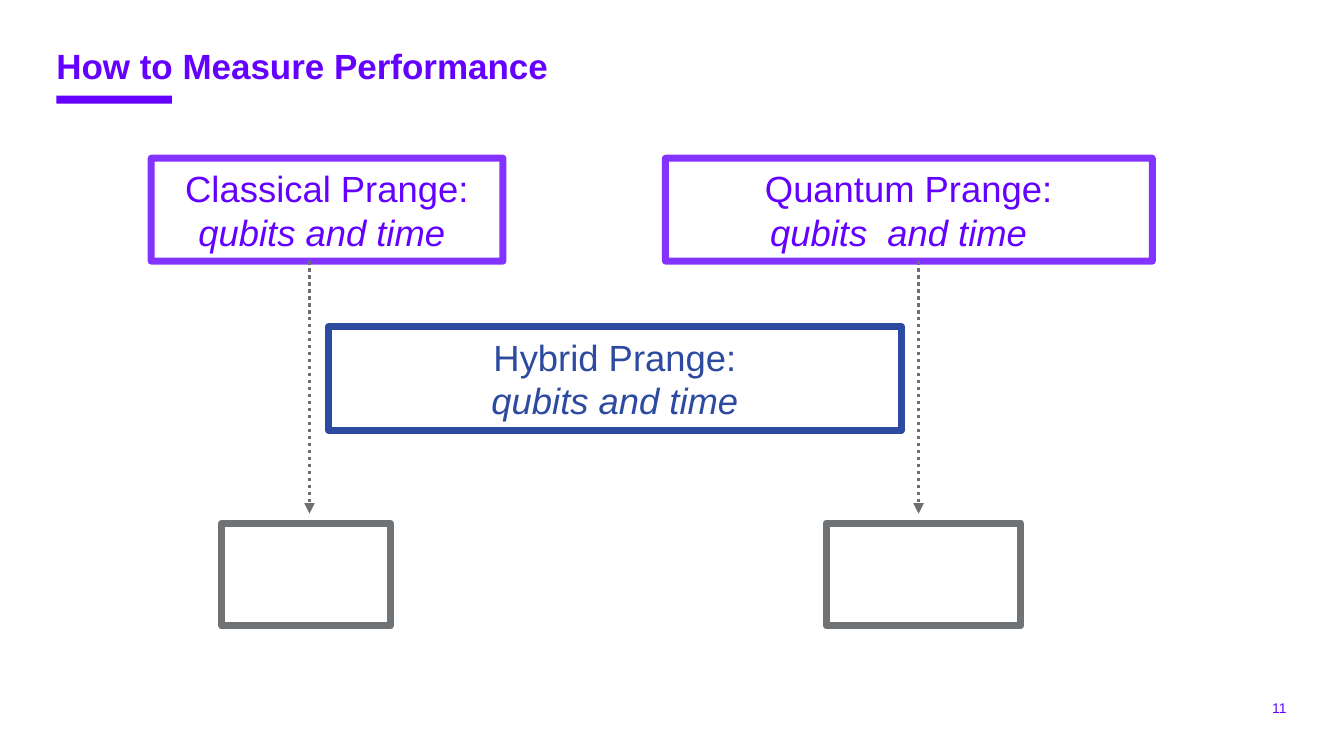
from collections import namedtuple

from lxml.etree import SubElement
from pptx import Presentation
from pptx.dml.color import RGBColor
from pptx.enum.dml import MSO_LINE_DASH_STYLE as Dash
from pptx.enum.shapes import MSO_CONNECTOR as Connector, MSO_SHAPE as Shape
from pptx.enum.text import MSO_ANCHOR as Anchor, PP_ALIGN as Align
from pptx.oxml.ns import qn
from pptx.util import Inches, Pt

VIOLET = RGBColor(0x64, 0x00, 0xFF)
BLUE = RGBColor(0x2C, 0x4A, 0x9F)
ARROW_GRAY = RGBColor(0x6C, 0x70, 0x72)
BOX_GRAY = RGBColor(0x6F, 0x73, 0x75)

WIDTH, HEIGHT = Inches(13.33), Inches(7.5)
Box = namedtuple("Box", "left top width height")


def part(box, left, top, width, height):
    return Box(int(box.left + left * box.width), int(box.top + top * box.height),
               int(box.width * width), int(box.height * height))


def percent(*shares):
    return part(Box(0, 0, WIDTH, HEIGHT), *(share / 100 for share in shares))


def write(frame, text, size, color, bold=False, italic=False, align=Align.LEFT,
          spacing=None, right_indent=0, first=True):
    paragraph = frame.paragraphs[0] if first else frame.add_paragraph()
    paragraph.alignment = align
    paragraph.line_spacing = spacing
    if right_indent:
        paragraph._p.get_or_add_pPr().set("marR", str(Inches(right_indent)))
    run = paragraph.add_run()
    run.text = text
    run.font.name = "Arial"
    run.font.size = Pt(size)
    run.font.bold = bold
    run.font.italic = italic
    run.font.color.rgb = color


def add_label(slide, box, text, size, anchor=Anchor.TOP, **style):
    frame = slide.shapes.add_textbox(*box).text_frame
    frame.word_wrap = True
    frame.vertical_anchor = anchor
    frame.margin_left = frame.margin_right = frame.margin_top = frame.margin_bottom = 0
    write(frame, text, size, VIOLET, **style)


def add_outline(slide, box, color, opacity=100):
    outline = slide.shapes.add_shape(Shape.RECTANGLE, *box)
    outline.shadow.inherit = False
    outline.fill.background()
    outline.line.color.rgb = color
    outline.line.width = Pt(5)
    if opacity < 100:
        tint = outline.line._ln.find(".//" + qn("a:srgbClr"))
        SubElement(tint, qn("a:alpha"), val=str(opacity * 1000))
    return outline


def add_method(slide, box, heading, metrics, color, opacity=100, right_indent=0):
    frame = add_outline(slide, box, color, opacity).text_frame
    frame.word_wrap = True
    frame.vertical_anchor = Anchor.MIDDLE
    write(frame, heading, 26, color, align=Align.CENTER)
    write(frame, metrics, 26, color, italic=True, align=Align.CENTER,
          right_indent=right_indent, first=False)


def add_arrow(slide, x, top, bottom):
    arrow = slide.shapes.add_connector(Connector.STRAIGHT, x, top, x, bottom)
    arrow.line.color.rgb = ARROW_GRAY
    arrow.line.width = Pt(2.5)
    arrow.line.dash_style = Dash.ROUND_DOT
    SubElement(arrow.line._ln, qn("a:tailEnd"), type="triangle")
    SubElement(arrow._element.spPr, qn("a:effectLst"))


def add_branch(slide, box, heading, metrics, right_indent, arrow_at, result_at, result_width):
    method = part(box, 0, 0, 1, 0.22)
    add_method(slide, method, heading, metrics, VIOLET, 80, right_indent)
    shaft = part(box, arrow_at, 0.22, 0, 0.54)
    add_arrow(slide, shaft.left, shaft.top, shaft.top + shaft.height)
    add_outline(slide, part(box, result_at, 0.78, result_width, 0.22), BOX_GRAY)


def add_header(slide, box):
    add_label(slide, part(box, 0, 0, 1, 0.61), "How to Measure Performance", 25,
              bold=True, spacing=0.9)
    accent = slide.shapes.add_shape(Shape.RECTANGLE, *part(box, 0, 0.85, 0.12, 0.15))
    accent.shadow.inherit = False
    accent.fill.solid()
    accent.fill.fore_color.rgb = VIOLET
    accent.line.fill.background()


def main():
    deck = Presentation()
    deck.slide_width, deck.slide_height = WIDTH, HEIGHT
    slide = deck.slides.add_slide(deck.slide_layouts[6])
    add_header(slide, percent(4.2, 6.53, 71.64, 7.2))
    add_label(slide, percent(92.5, 92.53, 3.23, 2.13), "11", 10,
              anchor=Anchor.MIDDLE, align=Align.RIGHT)
    add_branch(slide, percent(11.25, 20.93, 26.18, 61.87), "Classical Prange:",
               "qubits and time", 0.1, 0.45, 0.2, 0.48)
    add_branch(slide, percent(49.51, 20.93, 36.23, 61.87), "Quantum Prange:",
               "qubits  and time", 0.2, 0.52, 0.33, 0.4)
    add_method(slide, percent(24.46, 43.2, 42.61, 13.73), "Hybrid Prange:",
               "qubits and time", BLUE)
    deck.save("out.pptx")


if __name__ == "__main__":
    main()
